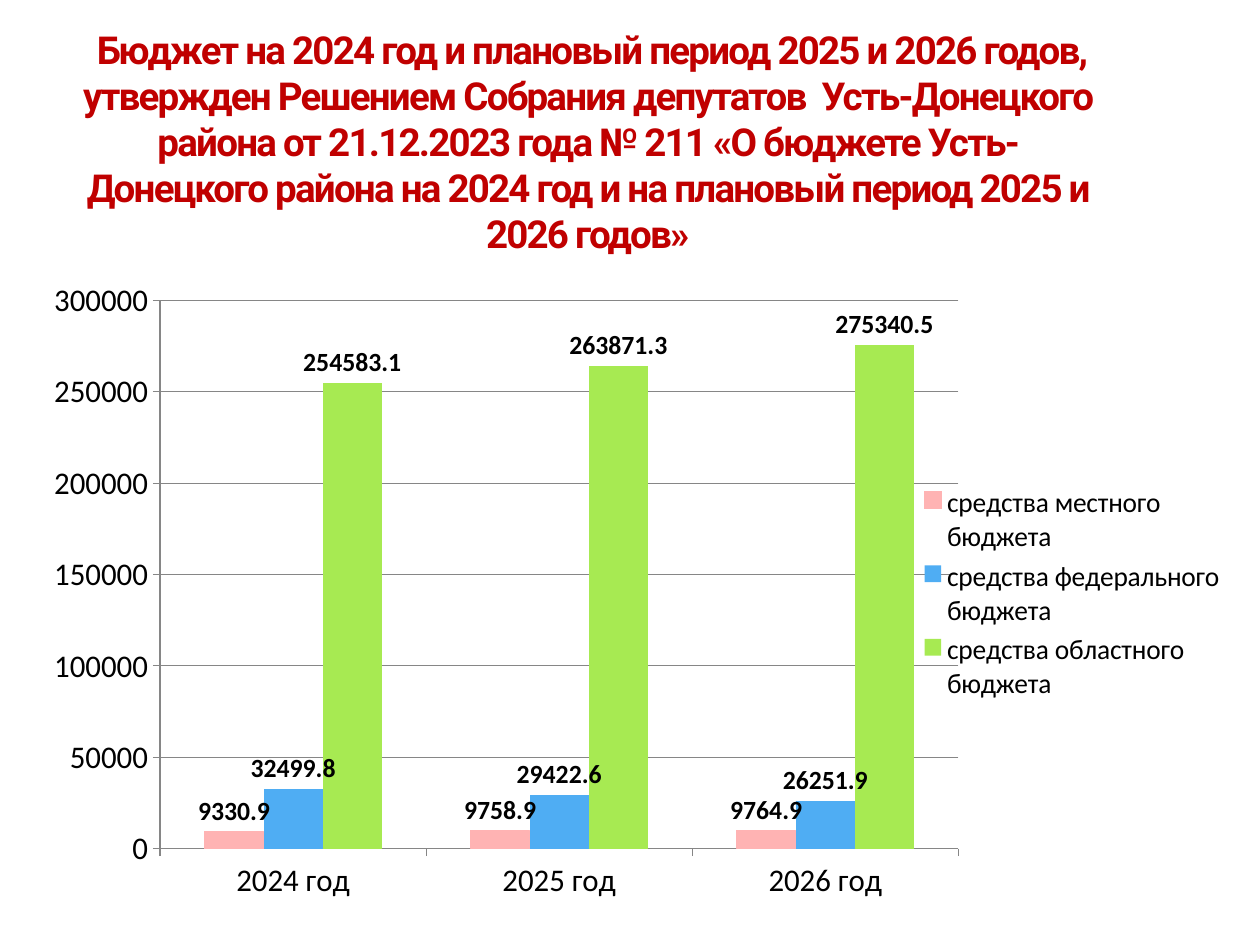
"""Build a district budget slide with a clustered column chart."""
from dataclasses import dataclass

from lxml import etree
from pptx import Presentation
from pptx.chart.data import CategoryChartData
from pptx.dml.color import RGBColor
from pptx.enum.chart import XL_CHART_TYPE, XL_LABEL_POSITION, XL_LEGEND_POSITION, XL_TICK_MARK
from pptx.enum.text import MSO_ANCHOR, MSO_AUTO_SIZE, PP_ALIGN
from pptx.oxml.ns import qn
from pptx.util import Inches, Pt

COLUMNS = XL_CHART_TYPE.COLUMN_CLUSTERED
OUTSIDE_END = XL_LABEL_POSITION.OUTSIDE_END
LEGEND_RIGHT = XL_LEGEND_POSITION.RIGHT
TICK_OUT = XL_TICK_MARK.OUTSIDE
TICK_NONE = XL_TICK_MARK.NONE
MIDDLE = MSO_ANCHOR.MIDDLE
NO_FIT = MSO_AUTO_SIZE.NONE
CENTER = PP_ALIGN.CENTER


@dataclass
class Theme:
    title_font: str = "Roboto"
    chart_font: str = "Calibri"
    title_color: str = "C00000"
    text_color: str = "000000"
    grid_color: str = "868686"
    title_size: int = 22
    axis_size: int = 18
    legend_size: int = 16
    label_size: int = 15


def format_text(font, name, size, color, bold=False):
    font.name = name
    font.size = Pt(size)
    font.bold = bold
    font.color.rgb = RGBColor.from_string(color)


def place_part(parent, index, **values):
    for old_layout in parent.findall(qn("c:layout")):
        parent.remove(old_layout)
    layout = etree.Element(qn("c:layout"))
    manual = etree.SubElement(layout, qn("c:manualLayout"))
    for tag, value in values.items():
        etree.SubElement(manual, qn(f"c:{tag}")).set("val", str(value))
    parent.insert(index, layout)


theme = Theme()
title_text = (
    " Бюджет на 2024 год и плановый период 2025 и 2026 годов, "
    "утвержден Решением Собрания депутатов  Усть-Донецкого района "
    "от 21.12.2023 года № 211 «О бюджете Усть-Донецкого района "
    "на 2024 год и на плановый период 2025 и 2026 годов»"
)
years = ["2024 год", "2025 год", "2026 год"]
budgets = [
    ("средства местного бюджета", "FFB3B3", (9330.9, 9758.9, 9764.9)),
    ("средства федерального бюджета", "4FADF3", (32499.8, 29422.6, 26251.9)),
    ("средства областного бюджета", "A7EA52", (254583.1, 263871.3, 275340.5)),
]

deck = Presentation()
deck.slide_width, deck.slide_height = Inches(10), Inches(7.5)
page = deck.slides.add_slide(deck.slide_layouts[5])

title = page.shapes.title
title.left, title.top = Inches(0.5), Inches(0.3)
title.width, title.height = Inches(8.33), Inches(1.64)
frame = title.text_frame
frame.word_wrap = True
frame.auto_size = NO_FIT
frame.vertical_anchor = MIDDLE
para = frame.paragraphs[0]
para.alignment = CENTER
span = para.add_run()
span.text = title_text
format_text(span.font, theme.title_font, theme.title_size, theme.title_color, bold=True)
span.font._element.set("spc", "-100")

chart_data = CategoryChartData()
chart_data.categories = years
for name, color, values in budgets:
    chart_data.add_series(name, values)
chart = page.shapes.add_chart(
    COLUMNS, Inches(0.43), Inches(2.18), Inches(9.38), Inches(5.12), chart_data
).chart
chart.has_title = False
format_text(chart.font, theme.chart_font, theme.axis_size, theme.text_color)

plot = chart.plots[0]
plot.vary_by_categories = False
plot.gap_width = 150
plot.overlap = 0
for series, (name, color, values) in zip(plot.series, budgets):
    series.format.fill.solid()
    series.format.fill.fore_color.rgb = RGBColor.from_string(color)
    series.invert_if_negative = False
    labels = series.data_labels
    labels.show_value = True
    labels.position = OUTSIDE_END
    format_text(labels.font, theme.chart_font, theme.label_size, theme.text_color, bold=True)
local_line = plot.series[0].format.line
local_line.color.rgb = RGBColor.from_string(budgets[0][1])
local_line.width = Pt(0.75)

value_axis = chart.value_axis
value_axis.minimum_scale, value_axis.maximum_scale = 0, 300000
value_axis.major_unit = 50000
value_axis.has_major_gridlines = True
for axis in (chart.category_axis, value_axis):
    axis.major_tick_mark = TICK_OUT
    axis.minor_tick_mark = TICK_NONE
for part in (chart.category_axis, value_axis, value_axis.major_gridlines):
    part.format.line.color.rgb = RGBColor.from_string(theme.grid_color)
    part.format.line.width = Pt(0.75)

chart.has_legend = True
chart.legend.position = LEGEND_RIGHT
chart.legend.include_in_layout = False
format_text(chart.legend.font, theme.chart_font, theme.legend_size, theme.text_color)

chart_root = chart.element.find(qn("c:chart"))
place_part(
    chart_root.find(qn("c:plotArea")), 0,
    layoutTarget="inner", xMode="edge", yMode="edge", x=0.07, y=0.04, w=0.69, h=0.85,
)
place_part(
    chart_root.find(qn("c:legend")), 1,
    xMode="edge", yMode="edge", x=0.73, y=0.32, w=0.26, h=0.35,
)

deck.save("out.pptx")
